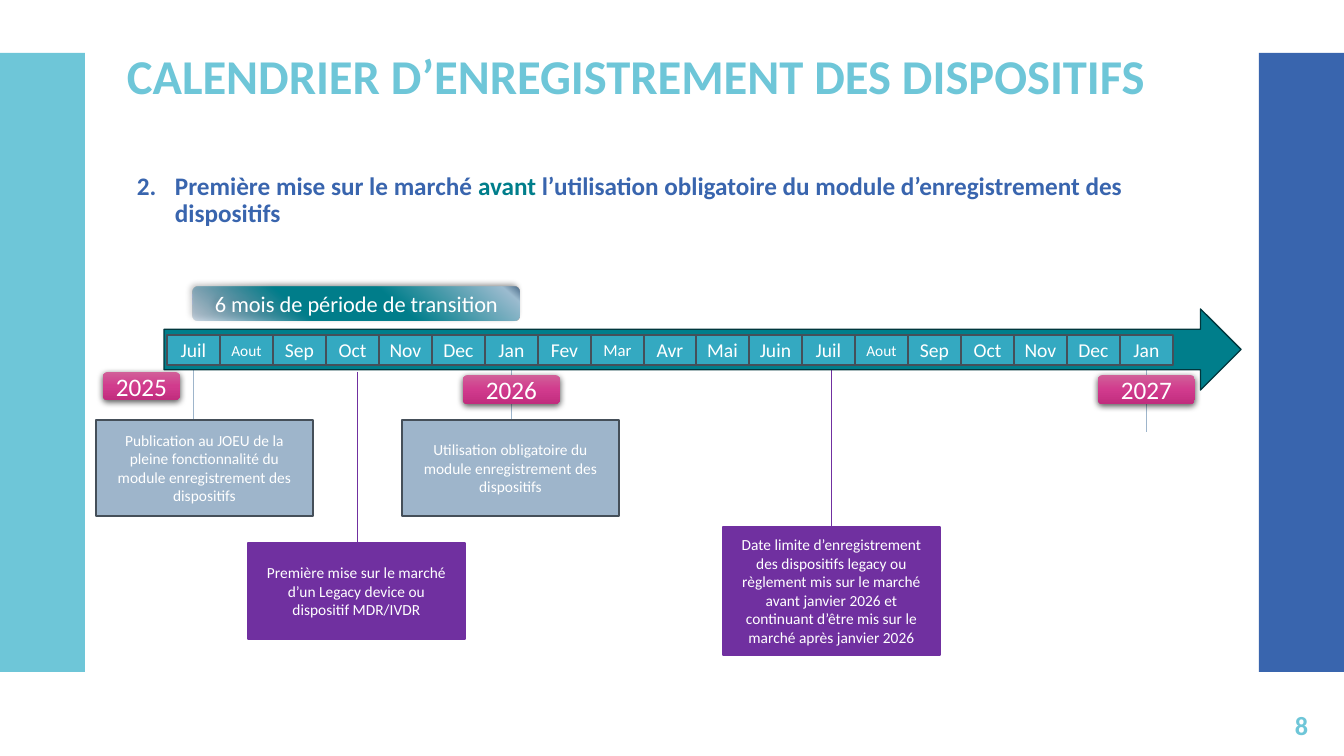
from lxml import etree
from pptx import Presentation
from pptx import util as u
from pptx.dml.color import RGBColor
from pptx.enum import shapes, text
from pptx.oxml import ns

SCALE = 12192000 / 1344
AQUA, BLUE, TEAL, STEEL, PURPLE, SLATE, WHITE = (
    "6EC6D8", "3965AE", "007E8B", "9EB5CB", "7030A0", "454F59", "FFFFFF")
RECT = shapes.MSO_SHAPE.RECTANGLE
ROUNDED = shapes.MSO_SHAPE.ROUNDED_RECTANGLE
MONTHS = ("Juil Aout Sep Oct Nov Dec Jan Fev Mar Avr Mai Juin "
          "Juil Aout Sep Oct Nov Dec Jan").split()
MONTH_SIZES = {"Aout": 11, "Mar": 12}
PINK_STOPS = [(0, "D16099", 100), (50, "D13B8D", 100), (100, "C12D7E", 100)]
TRANSITION_STOPS = [(0, "486886", 100), (5, "9DBDD1", 100), (39, TEAL, 100),
                    (67, TEAL, 100), (100, "5C83A8", 30)]


def px(length):
    """Turn pixels into EMU."""
    return u.Emu(round(length * SCALE))


def color(hex_code):
    """Turn a hex string into a colour."""
    return RGBColor.from_string(hex_code)


def add_xml(parent, tag, **attributes):
    """Append a drawing element with the given attributes."""
    element = etree.SubElement(parent, ns.qn(tag))
    for name, value in attributes.items():
        element.set(name, str(value))
    return element


def add_color_xml(parent, hex_code, opacity):
    """Append a colour with its opacity in percent."""
    rgb = add_xml(parent, "a:srgbClr", val=hex_code)
    if opacity < 100:
        add_xml(rgb, "a:alpha", val=opacity * 1000)


def set_font(font, size, hex_code, bold=False):
    """Set the typeface, size, colour and weight."""
    font.name, font.size, font.bold = "Calibri", u.Pt(size), bold
    font.color.rgb = color(hex_code)


def add_label(shape, words, size, hex_code=WHITE, bold=False):
    """Centre one paragraph in a shape."""
    frame = shape.text_frame
    frame.word_wrap = True
    frame.vertical_anchor = text.MSO_ANCHOR.MIDDLE
    paragraph = frame.paragraphs[0]
    paragraph.text = words
    paragraph.alignment = text.PP_ALIGN.CENTER
    set_font(paragraph.font, size, hex_code, bold)


def add_block(slide, box, fill, outline=None, kind=RECT):
    """Draw a flat shape with an optional outline."""
    block = slide.shapes.add_shape(kind, *map(px, box))
    block.shadow.inherit = False
    block.fill.solid()
    block.fill.fore_color.rgb = color(fill)
    if outline:
        block.line.color.rgb = color(outline)
        block.line.width = u.Pt(1)
    else:
        block.line.fill.background()
    return block


def add_pill(slide, box, words, size, stops, angle, shadow):
    """Draw a rounded label with a gradient and an outer shadow."""
    pill = add_block(slide, box, WHITE, kind=ROUNDED)
    pill.fill.gradient()
    gradient = pill.element.spPr.find(ns.qn("a:gradFill"))
    stop_list = gradient.find(ns.qn("a:gsLst"))
    stop_list.clear()
    for position, hex_code, opacity in stops:
        stop = add_xml(stop_list, "a:gs", pos=position * 1000)
        add_color_xml(stop, hex_code, opacity)
    gradient.find(ns.qn("a:lin")).set("ang", str(angle * 60000))
    opacity, blur, distance, direction = shadow
    effects = pill.element.spPr.find(ns.qn("a:effectLst"))
    outer = add_xml(effects, "a:outerShdw", blurRad=u.Pt(blur), dist=u.Pt(distance),
                    dir=direction * 60000, algn="ctr", rotWithShape=0)
    add_color_xml(outer, "000000", opacity)
    add_label(pill, words, size)


def add_marker(slide, x, top, bottom, hex_code):
    """Draw a thin vertical line below a month."""
    marker = slide.shapes.add_connector(
        shapes.MSO_CONNECTOR.STRAIGHT, px(x), px(top), px(x), px(bottom))
    marker.line.color.rgb = color(hex_code)
    marker.line.width = u.Pt(0.5)
    add_xml(marker.element.spPr, "a:effectLst")


def add_side_bands(slide, top, height, width):
    """Draw the coloured bands at both slide edges."""
    add_block(slide, (1344 - width, top, width, height), BLUE)
    add_block(slide, (0, top, width, height), AQUA)


def add_title(slide, box):
    """Write the slide title."""
    frame = slide.shapes.add_textbox(*map(px, box)).text_frame
    frame.word_wrap = True
    frame.margin_left = frame.margin_right = frame.margin_top = frame.margin_bottom = 0
    title = frame.paragraphs[0]
    title.text = "CALENDRIER D’ENREGISTREMENT DES DISPOSITIFS"
    title.line_spacing = 0.9
    set_font(title.font, 34.7, AQUA, True)


def add_case_heading(slide, box):
    """Write the numbered heading of the case."""
    frame = slide.shapes.add_textbox(*map(px, box)).text_frame
    frame.word_wrap = True
    heading = frame.paragraphs[0]
    heading.line_spacing = 0.9
    properties = heading._p.get_or_add_pPr()
    properties.set("marL", str(px(38)))
    properties.set("indent", str(px(-38)))
    add_xml(properties, "a:buFont", typeface="+mj-lt")
    add_xml(properties, "a:buAutoNum", type="arabicPeriod", startAt=2)
    for words, hex_code in [
            ("Première mise sur le marché ", BLUE), ("avant ", TEAL),
            ("l’utilisation obligatoire du module d’enregistrement des dispositifs", BLUE)]:
        run = heading.add_run()
        run.text = words
        set_font(run.font, 18, hex_code, True)


def add_timeline(slide, box):
    """Draw the arrow with its months, years and transition period."""
    left, top, width, height = box
    for x, bottom in [(1146, 432), (511, 469), (193, 429)]:
        add_marker(slide, x, top + 58, bottom, STEEL)
    add_block(slide, box, TEAL, "00373D", shapes.MSO_SHAPE.RIGHT_ARROW)
    edges = [left + 3 + round(1006 * i / len(MONTHS)) for i in range(len(MONTHS) + 1)]
    for month, start, end in zip(MONTHS, edges, edges[1:]):
        cell = add_block(slide, (start, top + 26, end - start, 30), "34A9C1", SLATE)
        cell.text_frame.margin_left = cell.text_frame.margin_right = 0
        add_label(cell, month, MONTH_SIZES.get(month, 14))
    add_pill(slide, (left + 29, top - 22, 327, 34), "6 mois de période de transition",
             16, TRANSITION_STOPS, 130, (40, 4, 3, 225))
    for year, x, y, year_width, year_height in [
            ("2025", 103, 63, 77, 28), ("2026", 463, 66, 97, 29), ("2027", 1098, 66, 97, 29)]:
        add_pill(slide, (x, top + y, year_width, year_height), year, 18,
                 PINK_STOPS, 90, (63, 4.5, 1.5, 90))


def add_event(slide, box, words, fill, outline):
    """Draw one event card."""
    add_label(add_block(slide, box, fill, outline), words, 11)


def add_page_number(slide, box):
    """Write the page number."""
    add_label(slide.shapes.add_textbox(*map(px, box)), "8", 18.7, AQUA, True)


def main():
    """Build and save the slide."""
    deck = Presentation()
    deck.slide_width, deck.slide_height = px(1344), px(756)
    slide = deck.slides.add_slide(deck.slide_layouts[6])
    add_side_bands(slide, 53, 619, 85)
    add_marker(slide, 831, 365, 558, PURPLE)
    add_case_heading(slide, (127, 169, 1090, 503))
    add_page_number(slide, (1259, 709, 85, 31))
    add_title(slide, (127, 53, 1090, 52))
    add_timeline(slide, (164, 309, 1077, 81))
    add_event(slide, (96, 420, 217, 96),
              "Publication au JOEU de la pleine fonctionnalité du module "
              "enregistrement des dispositifs", STEEL, SLATE)
    add_event(slide, (402, 420, 217, 96),
              "Utilisation obligatoire du module enregistrement des dispositifs", STEEL, SLATE)
    add_marker(slide, 357, 372, 565, PURPLE)
    add_event(slide, (248, 543, 217, 96),
              "Première mise sur le marché d’un Legacy device ou dispositif MDR/IVDR",
              PURPLE, PURPLE)
    add_event(slide, (723, 527, 217, 128),
              "Date limite d’enregistrement des dispositifs legacy ou règlement mis sur le "
              "marché avant janvier 2026 et continuant d’être mis sur le marché après "
              "janvier 2026", PURPLE, PURPLE)
    deck.save("out.pptx")


if __name__ == "__main__":
    main()
